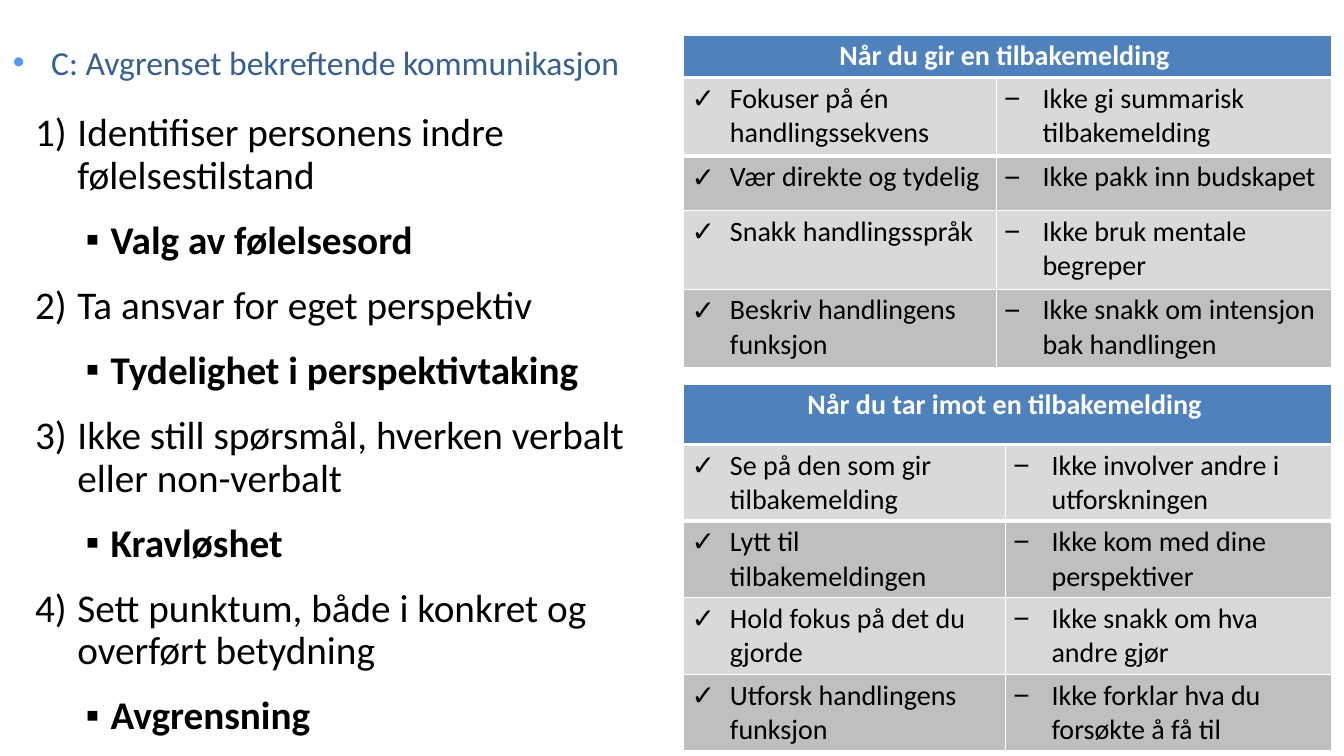
from lxml import etree
from pptx import Presentation
from pptx import util as u
from pptx.dml.color import RGBColor
from pptx.enum import shapes, text
from pptx.oxml.ns import qn

WIDTH, HEIGHT = 13.33, 7.5
FONT = "Calibri"
COLORS = {"white": "FFFFFF", "black": "000000", "header": "4F81BD", "title": "376092",
          "bullet": "549AF0", "light": "D9D9D9", "dark": "BFBFBF"}

TITLE = "C: Avgrenset bekreftende kommunikasjon"
STEPS = [
    ("Identifiser personens indre følelsestilstand", "Valg av følelsesord"),
    ("Ta ansvar for eget perspektiv", "Tydelighet i perspektivtaking"),
    ("Ikke still spørsmål, hverken verbalt eller non-verbalt", "Kravløshet"),
    ("Sett punktum, både i konkret og overført betydning", "Avgrensning"),
]
FEEDBACK_TABLES = [
    {"top": 0.35, "columns": (3.1, 3.33), "rows": (0.4, 0.78, 0.54, 0.78, 0.78),
     "header": "Når du gir en tilbakemelding ",
     "advice": [
         ("Fokuser på én handlingssekvens", "Ikke gi summarisk tilbakemelding"),
         ("Vær direkte og tydelig", "Ikke pakk inn budskapet"),
         ("Snakk handlingsspråk", "Ikke bruk mentale begreper"),
         ("Beskriv handlingens funksjon", "Ikke snakk om intensjon bak handlingen")]},
    {"top": 3.81, "columns": (3.19, 3.24), "rows": (0.6, 0.74, 0.74, 0.74, 0.74),
     "header": "Når du tar imot en tilbakemelding ",
     "advice": [
         ("Se på den som gir tilbakemelding", "Ikke involver andre i utforskningen"),
         ("Lytt til tilbakemeldingen", "Ikke kom med dine perspektiver"),
         ("Hold fokus på det du gjorde", "Ikke snakk om hva andre gjør"),
         ("Utforsk handlingens funksjon", "Ikke forklar hva du forsøkte å få til")]},
]
TABLE_LEFT = 6.78
ADVICE_MARKS = ("✓", "−")


def rgb(name):
    return RGBColor.from_string(COLORS[name])


def solid_fill(parent, color):
    fill = etree.SubElement(parent, qn("a:solidFill"))
    etree.SubElement(fill, qn("a:srgbClr"), val=COLORS[color])


def write(para, words, size, color, bold=False):
    span = para.add_run()
    span.text = words
    span.font.name = FONT
    span.font.size = u.Pt(size)
    span.font.bold = bold
    span.font.color.rgb = rgb(color)


def add_bullet(para, margin, hang, char=None, number=None, color=None):
    """Give a paragraph a hanging indent with a character or a number."""
    props = para._p.get_or_add_pPr()
    props.set("marL", str(int(u.Inches(margin))))
    props.set("indent", str(-int(u.Inches(hang))))
    if color:
        bullet_color = etree.SubElement(props, qn("a:buClr"))
        etree.SubElement(bullet_color, qn("a:srgbClr"), val=COLORS[color])
    if char:
        etree.SubElement(props, qn("a:buFont"), typeface="Arial")
        etree.SubElement(props, qn("a:buChar"), char=char)
    else:
        etree.SubElement(props, qn("a:buFont"), typeface="+mj-lt")
        etree.SubElement(props, qn("a:buAutoNum"), type="arabicParenR", startAt=str(number))


def style_cell(cell, fill, top, bottom):
    cell.margin_left = cell.margin_right = u.Inches(0.08)
    cell.margin_top = cell.margin_bottom = u.Inches(0.04)
    props = cell._tc.get_or_add_tcPr()
    for side, width in (("L", 1), ("R", 1), ("T", top), ("B", bottom)):
        line = etree.SubElement(props, qn(f"a:ln{side}"), w=str(int(u.Pt(width))))
        solid_fill(line, "white")
    cell.fill.solid()
    cell.fill.fore_color.rgb = rgb(fill)


def add_feedback_table(page, content):
    columns, rows = content["columns"], content["rows"]
    table = page.shapes.add_table(
        len(rows), len(columns), u.Inches(TABLE_LEFT), u.Inches(content["top"]),
        u.Inches(sum(columns)), u.Inches(sum(rows))).table
    for column, width in zip(table.columns, columns):
        column.width = u.Inches(width)
    for row, height in zip(table.rows, rows):
        row.height = u.Inches(height)
    edges = [1, 3, 3] + [1] * (len(rows) - 2)
    for r in range(len(rows)):
        fill = "header" if r == 0 else ("dark", "light")[r % 2]
        for c in range(len(columns)):
            style_cell(table.cell(r, c), fill, edges[r], edges[r + 1])
    header = table.cell(0, 0)
    header.merge(table.cell(0, 1))
    para = header.text_frame.paragraphs[0]
    para.alignment = text.PP_ALIGN.CENTER
    write(para, content["header"], 20, "white", bold=True)
    for r, pair in enumerate(content["advice"], 1):
        for c, words in enumerate(pair):
            para = table.cell(r, c).text_frame.paragraphs[0]
            add_bullet(para, 0.38, 0.38, char=ADVICE_MARKS[c])
            write(para, words, 20, "black")


def add_steps(page):
    box = page.shapes.add_textbox(u.Inches(0.25), u.Inches(1.07), u.Inches(6.53), u.Inches(6.33))
    frame = box.text_frame
    frame.word_wrap = True
    lines = [(number, level, words) for number, step in enumerate(STEPS, 1)
             for level, words in enumerate(step)]
    for i, (number, level, words) in enumerate(lines):
        para = frame.add_paragraph() if i else frame.paragraphs[0]
        para.level = level
        para.line_spacing = 0.9
        para.space_after = u.Pt(16.3)
        if level:
            add_bullet(para, 0.75, 0.25, char="▪")
        else:
            add_bullet(para, 0.42, 0.42, number=number)
        write(para, words, 28, "black", bold=level == 1)


def add_title(page):
    box = page.shapes.add_shape(shapes.MSO_SHAPE.RECTANGLE, u.Inches(-0.28), u.Inches(0.26),
                                u.Inches(6.83), u.Inches(0.71))
    box.shadow.inherit = False
    box.fill.solid()
    box.fill.fore_color.rgb = rgb("white")
    box.line.fill.background()
    frame = box.text_frame
    frame.word_wrap = True
    frame.vertical_anchor = text.MSO_ANCHOR.MIDDLE
    frame.margin_left = frame.margin_right = u.Inches(0.14)
    frame.margin_top = frame.margin_bottom = u.Inches(0.07)
    para = frame.paragraphs[0]
    para.alignment = text.PP_ALIGN.CENTER
    add_bullet(para, 0.38, 0.38, char="•", color="bullet")
    write(para, TITLE, 24, "title")


def main():
    deck = Presentation()
    deck.slide_width, deck.slide_height = u.Inches(WIDTH), u.Inches(HEIGHT)
    page = deck.slides.add_slide(deck.slide_layouts[6])
    for content in FEEDBACK_TABLES:
        add_feedback_table(page, content)
    add_steps(page)
    add_title(page)
    deck.save("out.pptx")


if __name__ == "__main__":
    main()
